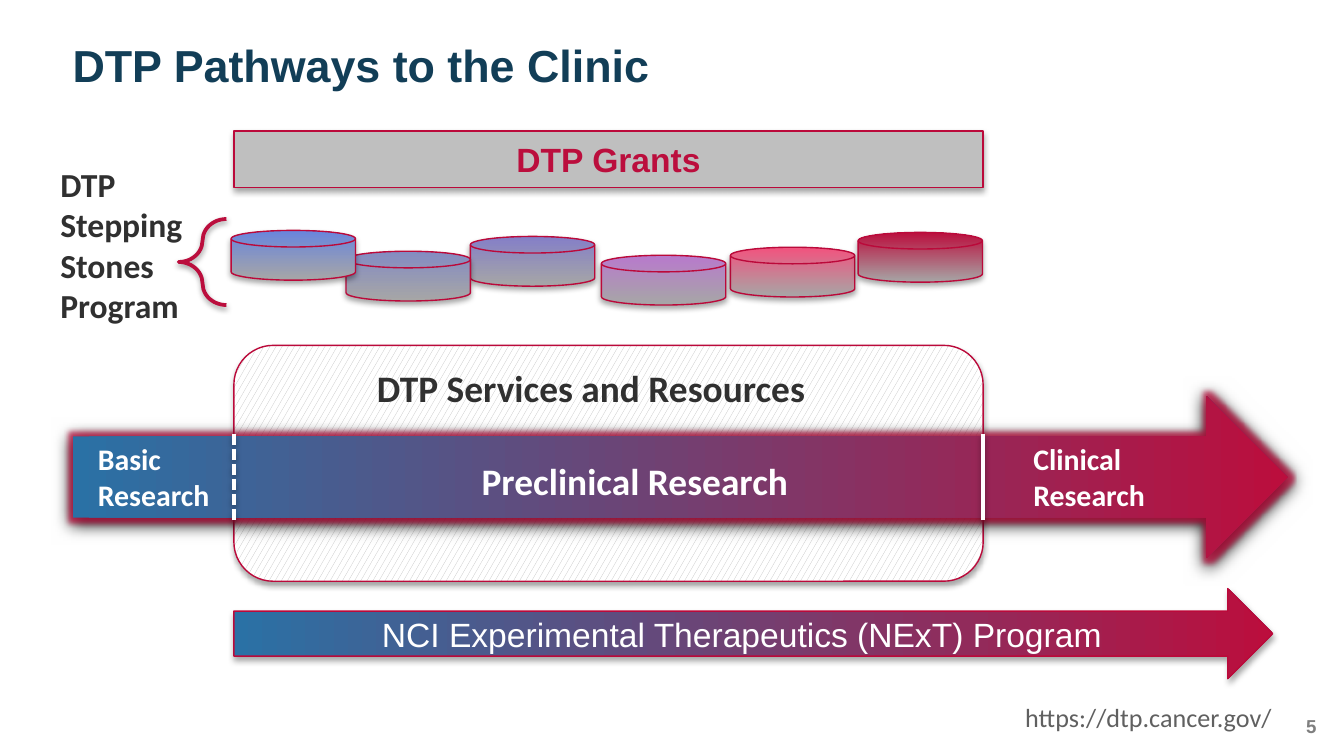
import pptx
import pptx.dml.color
import pptx.enum.dml
import pptx.enum.shapes
import pptx.enum.text
import pptx.oxml.ns
import pptx.util
from lxml import etree

PX = 4572
SHAPE = pptx.enum.shapes.MSO_SHAPE
ALIGN = pptx.enum.text.PP_ALIGN
ANCHOR = pptx.enum.text.MSO_ANCHOR
BLUE, RED, EDGE, GRAY, INK, WHITE = "2A71A5", "BB0E3D", "BB093A", "BFBFBF", "303030", "FFFFFF"
SOFT_SHADOW = ("000000", 35, 3.1, 1.8)
LINE_SHADOW = ("000000", 38, 3.1, 1.6)
DARK_SHADOW = ("000000", 100, 8.5, 1)


def emu(*lengths):
    return [pptx.util.Emu(length * PX) for length in lengths]


def color(value):
    return pptx.dml.color.RGBColor.from_string(value)


def add_effect_color(effect, hue, alpha):
    tag = pptx.oxml.ns.qn
    shade = etree.SubElement(effect, tag("a:srgbClr"), val=hue)
    etree.SubElement(shade, tag("a:alpha"), val=str(alpha * 1000))


def add_effects(shape, shadow, glow=None):
    tag = pptx.oxml.ns.qn
    effects = etree.SubElement(shape.element.spPr, tag("a:effectLst"))
    if glow:
        halo = etree.SubElement(effects, tag("a:glow"), rad=str(pptx.util.Pt(5)))
        add_effect_color(halo, glow, 75)
    hue, alpha, blur, distance = shadow
    outer = etree.SubElement(effects, tag("a:outerShdw"), blurRad=str(pptx.util.Pt(blur)),
                             dist=str(pptx.util.Pt(distance)), dir="5400000", rotWithShape="0")
    add_effect_color(outer, hue, alpha)


def add_text(text_frame, text, size, font, hue, bold=True, align=None):
    text_frame.text = text
    paragraph = text_frame.paragraphs[0]
    paragraph.alignment = align
    run_font = paragraph.runs[0].font
    run_font.size = pptx.util.Pt(size)
    run_font.name = font
    run_font.bold = bold
    run_font.color.rgb = color(hue)
    return paragraph


def add_label(shapes, box, text, size, hue, bold=True):
    text_frame = shapes.add_textbox(*emu(*box)).text_frame
    text_frame.word_wrap = True
    text_frame.auto_size = pptx.enum.text.MSO_AUTO_SIZE.SHAPE_TO_FIT_TEXT
    add_text(text_frame, text, size, "Calibri", hue, bold)


def add_plain_text(shapes, box, text, size, hue, anchor, align, spacing):
    text_frame = shapes.add_textbox(*emu(*box)).text_frame
    text_frame.margin_left = text_frame.margin_right = 0
    text_frame.margin_top = text_frame.margin_bottom = 0
    text_frame.word_wrap = True
    text_frame.vertical_anchor = anchor
    add_text(text_frame, text, size, "Arial", hue, align=align).line_spacing = spacing


def add_figure(shapes, kind, box, line=EDGE, width=0.75, shadow=SOFT_SHADOW, glow=None):
    shape = shapes.add_shape(kind, *emu(*box))
    if line:
        shape.line.color.rgb = color(line)
        shape.line.width = pptx.util.Pt(width)
    else:
        shape.line.fill.background()
    add_effects(shape, shadow, glow)
    return shape


def fill_gradient(shape, start, end, angle):
    shape.fill.gradient()
    shape.fill.gradient_angle = angle
    for stop, hue in zip(shape.fill.gradient_stops, (start, end)):
        stop.color.rgb = color(hue)


def add_banner(shapes, kind, box, text, hue, bold):
    banner = add_figure(shapes, kind, box)
    banner.text_frame.word_wrap = True
    banner.text_frame.vertical_anchor = ANCHOR.MIDDLE
    add_text(banner.text_frame, text, 18, "Arial", hue, bold, ALIGN.CENTER)
    return banner


def add_grants(shapes, box):
    banner = add_banner(shapes, SHAPE.RECTANGLE, box, "DTP Grants", RED, True)
    banner.fill.solid()
    banner.fill.fore_color.rgb = color(GRAY)


def add_next_program(shapes, box):
    title = "NCI Experimental Therapeutics (NExT) Program"
    fill_gradient(add_banner(shapes, SHAPE.RIGHT_ARROW, box, title, WHITE, False), BLUE, RED, 0)


def add_services(shapes, box):
    panel = add_figure(shapes, SHAPE.ROUNDED_RECTANGLE, box)
    panel.fill.patterned()
    panel.fill.pattern = pptx.enum.dml.MSO_PATTERN.LARGE_CONFETTI
    panel.fill.fore_color.rgb = color(GRAY)
    panel.fill.back_color.rgb = color(WHITE)
    left, top = box[:2]
    add_label(shapes, (left + 193, top + 20, 822, 88), "DTP Services and Resources", 20, INK)


def add_research_arrow(shapes, box):
    left, top = box[:2]
    group = shapes.add_group_shape().shapes
    arrow = add_figure(group, SHAPE.RIGHT_ARROW, box, None, shadow=DARK_SHADOW, glow=RED)
    fill_gradient(arrow, BLUE, RED, 0)
    labels = [("Basic Research", 18, 57, 244, 128, 16),
              ("Preclinical Research", 589, 83, 564, 88, 20),
              ("Clinical Research", 1410, 57, 244, 128, 16)]
    for text, x, y, label_width, label_height, size in labels:
        add_label(group, (left + x, top + y, label_width, label_height), text, size, WHITE)
    for x, dash in ((1355, None), (240, pptx.enum.dml.MSO_LINE.SQUARE_DOT)):
        divider = group.add_connector(pptx.enum.shapes.MSO_CONNECTOR.STRAIGHT,
                                      *emu(left + x, top + 57, left + x, top + 185))
        divider.line.color.rgb = color(WHITE)
        divider.line.width = pptx.util.Pt(2)
        divider.line.dash_style = dash
        add_effects(divider, LINE_SHADOW)


def add_stepping_stones(shapes, box):
    left, top = box[:2]
    stones = [(1017, 134, "F2537E"), (1207, 112, RED), (630, 118, "847FC7"),
              (825, 146, "B87ACC"), (445, 140, "848BC2"), (274, 109, "6985DD")]
    for x, y, hue in stones:
        stone = add_figure(shapes, SHAPE.FLOWCHART_MAGNETIC_DISK, (left + x, top + y, 185, 74))
        fill_gradient(stone, "A6A6A6", hue, 90)
    brace = add_figure(shapes, SHAPE.LEFT_BRACE, (left + 196, top + 92, 71, 128),
                       RED, 2, LINE_SHADOW)
    brace.fill.background()
    brace.adjustments[0] = 0.69
    add_label(shapes, (left, top, 258, 262), "DTP Stepping Stones Program", 18, INK)


def main():
    presentation = pptx.Presentation()
    presentation.slide_width, presentation.slide_height = emu(2000, 1125)
    shapes = presentation.slides.add_slide(presentation.slide_layouts[6]).shapes
    add_plain_text(shapes, (1891, 1064, 68, 40), "5", 10, "7F7F7F", ANCHOR.TOP, ALIGN.RIGHT, 1.01)
    add_plain_text(shapes, (108, 67, 1786, 70), "DTP Pathways to the Clinic", 24, "123E57",
                   ANCHOR.BOTTOM, ALIGN.LEFT, 0.9)
    add_services(shapes, (348, 514, 1115, 351))
    add_research_arrow(shapes, (108, 589, 1808, 242))
    add_grants(shapes, (348, 195, 1115, 84))
    add_stepping_stones(shapes, (70, 234, 1393, 262))
    add_next_program(shapes, (348, 876, 1546, 134))
    add_label(shapes, (1506, 1034, 412, 68), "https://dtp.cancer.gov/", 14, "606060", False)
    presentation.save("out.pptx")


if __name__ == "__main__":
    main()
